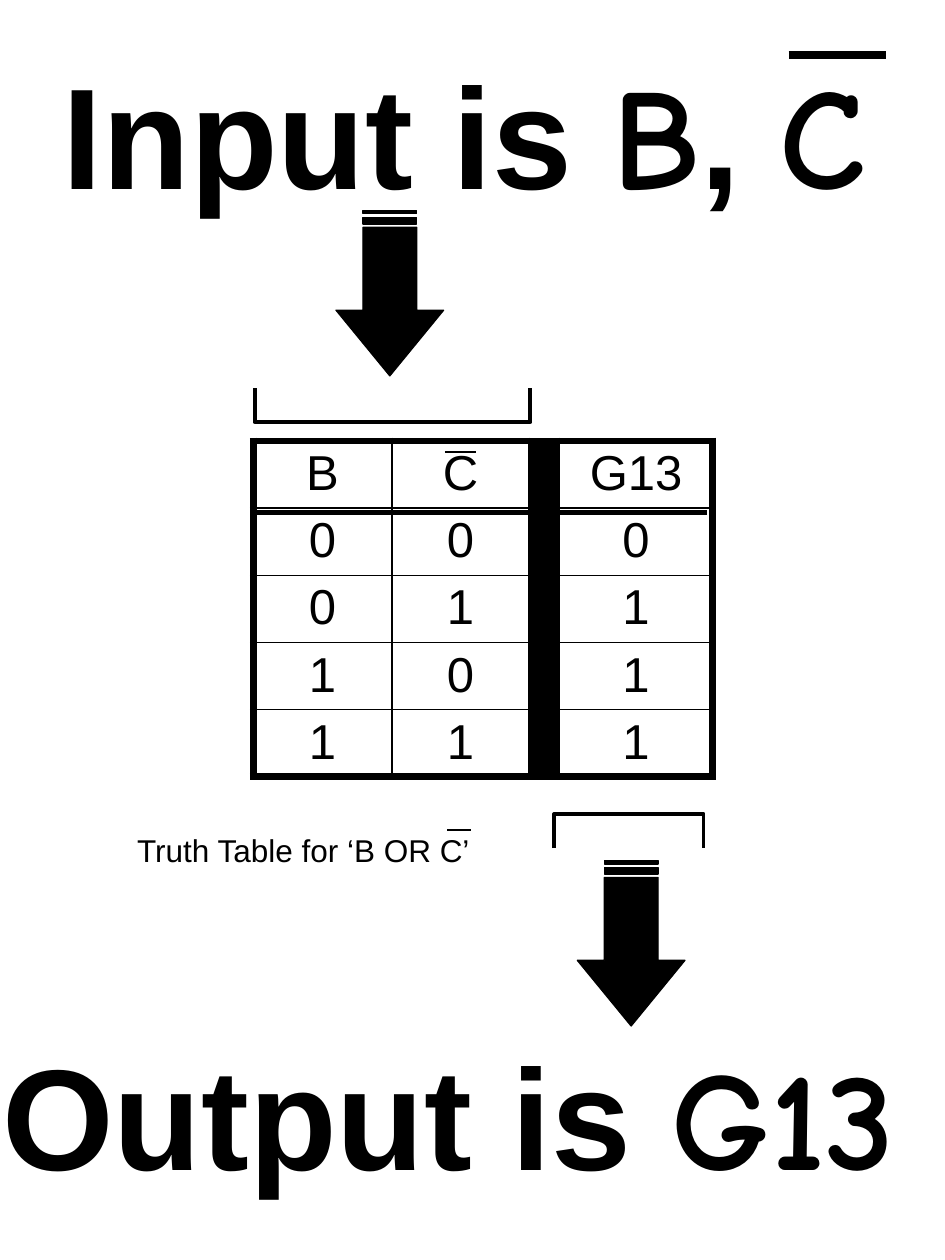
from lxml import etree
from pptx import Presentation
from pptx.dml.color import RGBColor
from pptx.enum import shapes, text
from pptx.oxml.ns import qn
from pptx.util import Pt

THEME = {"ink": RGBColor(0, 0, 0), "sans": "Arial", "hand": "Comic Neue",
         "title": 82, "code": 80, "cell": 28, "note": 18,
         "thick": 4.5, "thin": 1}

ROWS = [("B", "C", "", "G13"),
        ("0", "0", "", "0"),
        ("0", "1", "", "1"),
        ("1", "0", "", "1"),
        ("1", "1", "", "1")]
COLS = (79.2, 78.5, 16.6, 87.7)
LEFT, TOP, HIGH = 144.7, 252, 38.4
BAR = 2

LABELS = [
    ((71.3, 471.6, 207.4, 28.8), False,
     [("Truth Table for ‘B OR C’", "sans", "note")]),
    ((28.8, 23, 476.6, 105.8), True,
     [("Input is ", "sans", "title"), ("B", "hand", "title"),
      (", ", "sans", "title"), ("C", "hand", "title")]),
    ((-5.8, 583.2, 549.4, 105.8), True,
     [("Output is ", "sans", "title"), ("G13", "hand", "code")]),
]
RULES = [(144.7, 403.9, 293, 3), (450.7, 506.2, 31.5, 4.5),
         (255.6, 269.3, 474.2, 1.5), (254.2, 272.2, 258.4, 1.5)]
ARROWS = [(175.5, 136.8), (313.4, 508.3)]
BRACKETS = [(145.5, 303.1, 241.2, 221.8), (316.8, 402, 465.1, 484.6)]


def paint(shape, width):
    shape.shadow.inherit = False
    shape.line.color.rgb = THEME["ink"]
    shape.line.width = Pt(width)


def style(run, face, size, bold=False):
    font = run.font
    font.name, font.size, font.bold = THEME[face], Pt(THEME[size]), bold
    font.color.rgb = THEME["ink"]


def edge(cell, sides):
    props = cell._tc.get_or_add_tcPr()
    for i, (side, width) in enumerate(sides):
        line = etree.Element(qn("a:ln" + side), w=str(Pt(width)))
        fill = etree.SubElement(line, qn("a:solidFill"))
        etree.SubElement(fill, qn("a:srgbClr"), val=str(THEME["ink"]))
        props.insert(i, line)


def grid(slide):
    frame = slide.shapes.add_table(len(ROWS), len(COLS), Pt(LEFT), Pt(TOP),
                                   Pt(sum(COLS)), Pt(HIGH * len(ROWS)))
    table = frame.table
    table.first_row = table.horz_banding = False
    for col, width in zip(table.columns, COLS):
        col.width = Pt(width)
    for r, row in enumerate(ROWS):
        table.rows[r].height = Pt(HIGH)
        for c, word in enumerate(row):
            cell = table.cell(r, c)
            cell.margin_top = cell.margin_bottom = Pt(3)
            if c == BAR:
                cell.fill.solid()
                cell.fill.fore_color.rgb = THEME["ink"]
            else:
                cell.fill.background()
                cell.text_frame.text = word
                para = cell.text_frame.paragraphs[0]
                para.alignment = text.PP_ALIGN.CENTER
                style(para.runs[0], "sans", "cell")
            outer = (("L", c == 0), ("R", c == len(COLS) - 1),
                     ("T", r == 0), ("B", r == len(ROWS) - 1))
            edge(cell, [(side, THEME["thick" if out else "thin"])
                        for side, out in outer])


def label(slide, box, bold, parts):
    frame = slide.shapes.add_textbox(*map(Pt, box)).text_frame
    frame.word_wrap = False
    frame.auto_size = text.MSO_AUTO_SIZE.SHAPE_TO_FIT_TEXT
    for word, face, size in parts:
        run = frame.paragraphs[0].add_run()
        run.text = word
        style(run, face, size, bold)


def rule(slide, x1, x2, y, width):
    line = slide.shapes.add_connector(shapes.MSO_CONNECTOR.STRAIGHT,
                                      Pt(x1), Pt(y), Pt(x2), Pt(y))
    line.line.color.rgb = THEME["ink"]
    line.line.width = Pt(width)
    etree.SubElement(line._element.spPr, qn("a:effectLst"))


def arrow(slide, x, y):
    shape = slide.shapes.add_shape(shapes.MSO_SHAPE.STRIPED_RIGHT_ARROW,
                                   Pt(x), Pt(y), Pt(94.5), Pt(61.5))
    shape.rotation = 90
    shape.adjustments[0], shape.adjustments[1] = 0.5, 0.61
    shape.fill.solid()
    shape.fill.fore_color.rgb = THEME["ink"]
    paint(shape, 0.75)


def bracket(slide, x1, x2, bar, tip):
    pen = slide.shapes.build_freeform(Pt(x1), Pt(tip))
    pen.add_line_segments([(Pt(x1), Pt(bar)), (Pt(x2), Pt(bar)),
                           (Pt(x2), Pt(tip))], close=False)
    shape = pen.convert_to_shape()
    shape.fill.background()
    paint(shape, 2.25)


def main():
    """Build the truth table slide for B OR not C."""
    deck = Presentation()
    deck.slide_width, deck.slide_height = Pt(540), Pt(720)
    slide = deck.slides.add_slide(deck.slide_layouts[6])
    grid(slide)
    for draw, items in ((label, LABELS), (arrow, ARROWS),
                        (bracket, BRACKETS), (rule, RULES)):
        for item in items:
            draw(slide, *item)
    deck.save("out.pptx")


if __name__ == "__main__":
    main()
